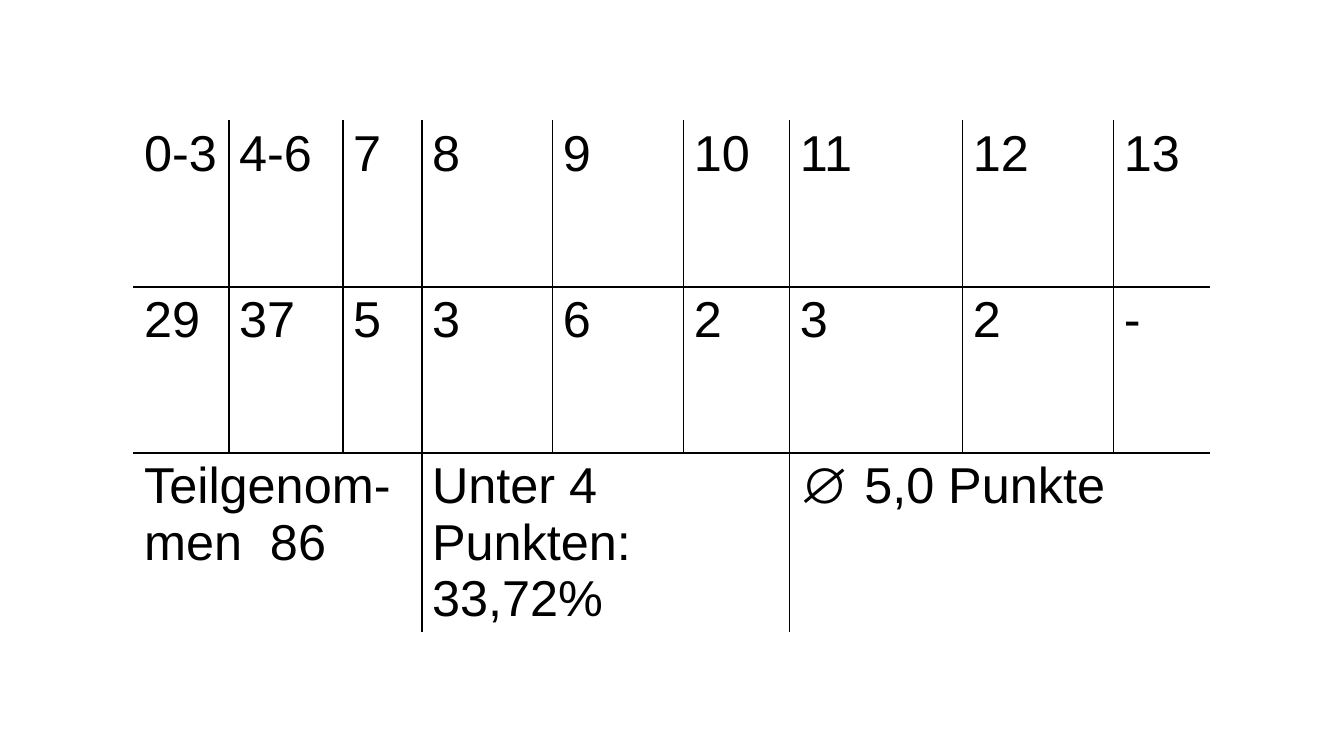
from dataclasses import dataclass

from lxml import etree
from pptx import Presentation, util as u
from pptx.dml.color import RGBColor
from pptx.oxml.ns import qn

EMU_PER_PX = 914400 / 100.8


@dataclass(frozen=True)
class Theme:
    ink: str = "000000"
    paper: str = "FFFFFF"
    font: str = "Arial"
    body: int = 36
    rule: int = 1


def px(n):
    return u.Emu(round(n * EMU_PER_PX))


def write(tf, content, *, font, size, color):
    """Fill a text frame, one paragraph per line of content."""
    tf.word_wrap = True
    for i, line in enumerate(content.split("\n")):
        p = tf.paragraphs[0] if i == 0 else tf.add_paragraph()
        r = p.add_run()
        r.text = line
        r.font.name = font
        r.font.size = u.Pt(size)
        r.font.color.rgb = RGBColor.from_string(color)


def set_borders(cell, colors, width):
    """Set cell borders; colors are left, right, top, bottom."""
    pr = cell._tc.get_or_add_tcPr()
    for i, (side, color) in enumerate(zip("LRTB", colors)):
        ln = etree.Element(qn(f"a:ln{side}"), w=str(u.Pt(width)))
        fill = etree.SubElement(ln, qn("a:solidFill"))
        etree.SubElement(fill, qn("a:srgbClr"), val=color)
        pr.insert(i, ln)


class SlideBuilder:
    def __init__(self, prs, theme):
        self.theme = theme
        self.s = prs.slides.add_slide(prs.slide_layouts[6])

    def table(self, left, top, widths, heights, rows):
        """Draw rows of (text, column span) with rules between cells only."""
        frame = self.s.shapes.add_table(
            len(heights), len(widths), px(left), px(top),
            px(sum(widths)), px(sum(heights)))
        tbl = frame.table
        tbl.first_row = tbl.horz_banding = False
        for col, width in zip(tbl.columns, widths):
            col.width = px(width)
        for row, height in zip(tbl.rows, heights):
            row.height = px(height)
        for y, row in enumerate(rows):
            x = 0
            for content, span in row:
                self.cell(tbl, y, x, content, span)
                x += span

    def cell(self, tbl, y, x, content, span):
        t = self.theme
        end = x + span
        outer = (x == 0, end == len(tbl.columns),
                 y == 0, y + 1 == len(tbl.rows))
        colors = [t.paper if edge else t.ink for edge in outer]
        for col in range(x, end):
            part = tbl.cell(y, col)
            part.fill.solid()
            part.fill.fore_color.rgb = RGBColor.from_string(t.paper)
            set_borders(part, colors, t.rule)
        first = tbl.cell(y, x)
        if span > 1:
            first.merge(tbl.cell(y, end - 1))
        write(first.text_frame, content,
              font=t.font, size=t.body, color=t.ink)


def main():
    prs = Presentation()
    prs.slide_width, prs.slide_height = px(1344), px(756)
    points = ["0-3", "4-6", "7", "8", "9", "10", "11", "12", "13"]
    counts = ["29", "37", "5", "3", "6", "2", "3", "2", "-"]
    summary = ["Teilgenom-men  86", "Unter 4 Punkten:\n33,72%",
               "∅ 5,0 Punkte"]
    rows = [[(content, span) for content in row]
            for row, span in ((points, 1), (counts, 1), (summary, 3))]
    SlideBuilder(prs, Theme()).table(
        134, 121,
        widths=[95, 114, 79, 131, 131, 106, 173, 151, 96],
        heights=[166, 166, 180],
        rows=rows)
    prs.save("out.pptx")


if __name__ == "__main__":
    main()
